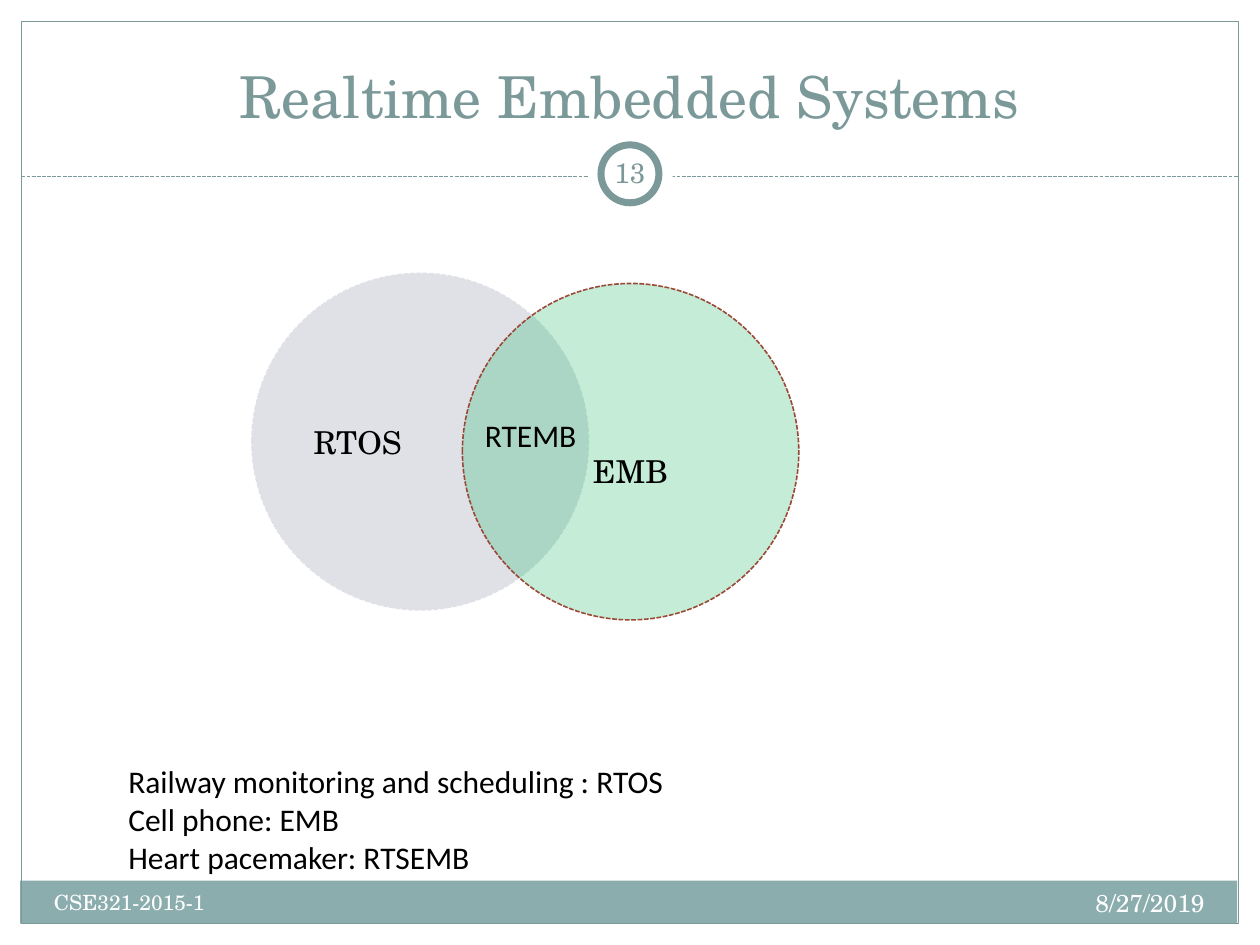
from lxml import etree
from pptx import Presentation
from pptx import util as u
from pptx.dml.color import RGBColor
from pptx.enum import dml, shapes, text
from pptx.oxml import ns

SERIF, SANS = "TeX Gyre Schola", "Calibri"
TEAL, BAND, WHITE, BLACK = "7C999A", "8CADAE", "FFFFFF", "000000"
LEFT, CENTER, RIGHT = text.PP_ALIGN.LEFT, text.PP_ALIGN.CENTER, text.PP_ALIGN.RIGHT
TOP, MIDDLE, BOTTOM = (text.MSO_ANCHOR.TOP, text.MSO_ANCHOR.MIDDLE,
                       text.MSO_ANCHOR.BOTTOM)
RECT, OVAL = shapes.MSO_SHAPE.RECTANGLE, shapes.MSO_SHAPE.OVAL

# Content: text, place, size, font, colour, alignment, anchor, wrap
TITLE = ("Realtime Embedded Systems", (0.33, 0.25, 9.33, 0.83),
         33, SERIF, TEAL, CENTER, BOTTOM, True)
PAGE_NUMBER = ("13", (4.75, 1.13, 0.5, 0.48), 16, SERIF, TEAL, CENTER, MIDDLE, True)
FOOTERS = [
    ("8/27/2019", (6.33, 7, 3.33, 0.4), 14, SERIF, WHITE, RIGHT, TOP, True),
    ("CSE321-2015-1", (0.33, 7.01, 3.92, 0.4), 12, SERIF, WHITE, LEFT, TOP, True),
]
NOTES = [
    ("RTEMB", (3.75, 3.25, 0.93, 0.4), 18, SANS, BLACK, LEFT, TOP, False),
    ("Railway monitoring and scheduling : RTOS\nCell phone: EMB\n"
     "Heart pacemaker: RTSEMB",
     (0.92, 6, 4.5, 1.01), 18, SANS, BLACK, LEFT, TOP, False),
]
# Venn sets: label, left, top, fill, opacity %, line, alignment, top inset
DIAMETER = 2.67
SETS = [
    ("RTOS", 2, 2.17, "DFE1E7", 100, "DFE1E7", LEFT, 0.05),
    ("EMB", 3.67, 2.25, "00B050", 23, "9B4936", CENTER, 0.35),
]


def rgb(value):
    return RGBColor.from_string(value)


def style_line(line, color, width, dashed=False):
    line.color.rgb = rgb(color)
    line.width = u.Pt(width)
    if dashed:
        line.dash_style = dml.MSO_LINE.SQUARE_DOT


def write(frame, content, size, font, color, align, anchor, wrap=True):
    frame.text = content
    frame.word_wrap = wrap
    frame.vertical_anchor = anchor
    for para in frame.paragraphs:
        para.alignment = align
        for span in para.runs:
            span.font.size = u.Pt(size)
            span.font.name = font
            span.font.color.rgb = rgb(color)


def add_text(page, content, place, *style):
    box = page.shapes.add_textbox(*map(u.Inches, place))
    write(box.text_frame, content, *style)
    return box


def add_shape(page, kind, place, fill=None, line=None, width=0.75, dashed=False):
    shape = page.shapes.add_shape(kind, *map(u.Inches, place))
    shape.shadow.inherit = False
    if fill:
        shape.fill.solid()
        shape.fill.fore_color.rgb = rgb(fill)
    else:
        shape.fill.background()
    if line:
        style_line(shape.line, line, width, dashed)
    else:
        shape.line.fill.background()
    return shape


def set_opacity(shape, percent):
    color = shape.fill._xPr.find(ns.qn("a:solidFill"))[0]
    etree.SubElement(color, ns.qn("a:alpha")).set("val", str(percent * 1000))


def add_frame(page):
    add_shape(page, RECT, (0.16, 6.99, 9.66, 0.34), BAND)
    add_shape(page, RECT, (0.17, 0.17, 9.66, 7.16), line=TEAL)
    rule = page.shapes.add_connector(
        shapes.MSO_CONNECTOR.STRAIGHT, *map(u.Inches, (0.17, 1.4, 9.83, 1.4)))
    style_line(rule.line, TEAL, 0.75, True)
    etree.SubElement(rule._element.spPr, ns.qn("a:effectLst"))
    # Page number ring, on a white disc that interrupts the rule
    add_shape(page, OVAL, (4.67, 1.05, 0.67, 0.67), WHITE)
    add_shape(page, OVAL, (4.77, 1.15, 0.46, 0.46), WHITE, TEAL, 4)


def add_venn(page):
    for label, left, top, fill, opacity, line, align, inset in SETS:
        circle = add_shape(page, OVAL, (left, top, DIAMETER, DIAMETER),
                           fill, line, 0.9, True)
        if opacity < 100:
            set_opacity(circle, opacity)
        write(circle.text_frame, label, 18, SERIF, BLACK, align, MIDDLE)
        circle.text_frame.margin_top = u.Inches(inset)


def main():
    deck = Presentation()
    deck.slide_width, deck.slide_height = u.Inches(10), u.Inches(7.5)
    page = deck.slides.add_slide(deck.slide_layouts[6])
    add_frame(page)
    add_text(page, *TITLE)
    number = add_text(page, *PAGE_NUMBER).text_frame
    number.margin_left = number.margin_right = u.Inches(0.05)
    add_venn(page)
    for item in NOTES + FOOTERS:
        add_text(page, *item)
    deck.save("out.pptx")


if __name__ == "__main__":
    main()
